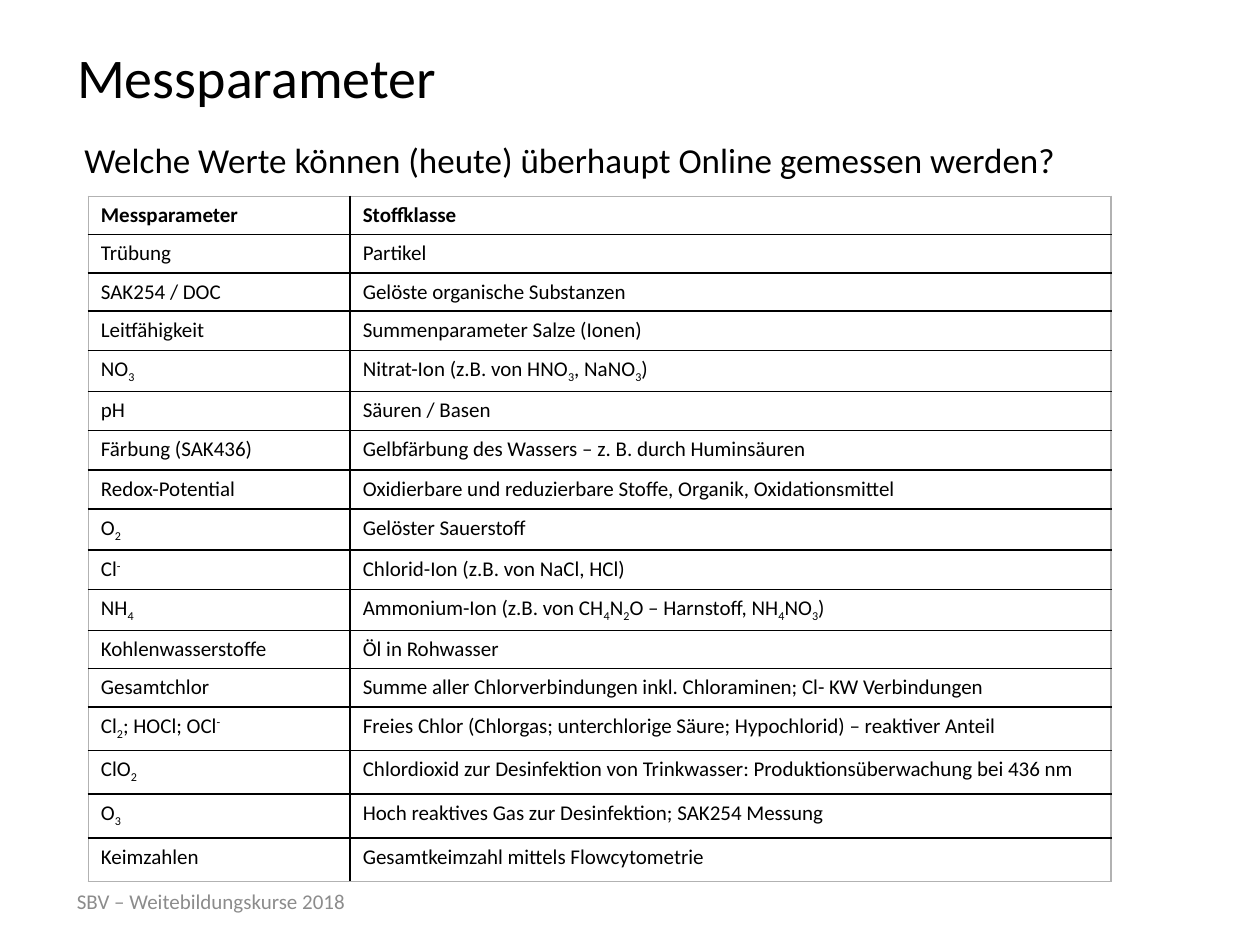
"""Build the slide listing water parameters that can be measured online."""
from lxml import etree
from pptx import Presentation
from pptx import util as u
from pptx.dml.color import RGBColor
from pptx.enum import text
from pptx.oxml.ns import qn

FONT = "Calibri"
BLACK, GREY, WHITE, RIM = "000000", "8C8C8C", "FFFFFF", "B2B2B2"
SHIFTS = {"_": "-25000", "^": "30000"}

TITLE = ("Messparameter", 32, BLACK, (1.3, 0.53, 18.39, 2.01))
BOXES = [
    ("SBV – Weitebildungskurse 2018", 12, GREY, (1.3, 17.65, 9.02, 1.02)),
    ("Welche Werte können (heute) überhaupt Online gemessen werden?",
     20, BLACK, (1.45, 2.51, 22.86, 1.4)),
]
ROWS = [
    ("Messparameter", "Stoffklasse"),
    ("Trübung", "Partikel"),
    ("SAK254 / DOC", "Gelöste organische Substanzen"),
    ("Leitfähigkeit", "Summenparameter Salze (Ionen)"),
    ("NO|_3", "Nitrat-Ion (z.B. von HNO|_3|, NaNO|_3|)"),
    ("pH", "Säuren / Basen"),
    ("Färbung (SAK436)", "Gelbfärbung des Wassers – z. B. durch Huminsäuren"),
    ("Redox-Potential",
     "Oxidierbare und reduzierbare Stoffe, Organik, Oxidationsmittel"),
    ("O|_2", "Gelöster Sauerstoff"),
    ("Cl|^-", "Chlorid-Ion (z.B. von NaCl, HCl)"),
    ("NH|_4",
     "Ammonium-Ion (z.B. von CH|_4|N|_2|O – Harnstoff, NH|_4|NO|_3|)"),
    ("Kohlenwasserstoffe", "Öl in Rohwasser"),
    ("Gesamtchlor",
     "Summe aller Chlorverbindungen inkl. Chloraminen; Cl- KW Verbindungen"),
    ("Cl|_2|; HOCl; OCl|^-",
     "Freies Chlor (Chlorgas; unterchlorige Säure; Hypochlorid) – reaktiver Anteil"),
    ("ClO|_2",
     "Chlordioxid zur Desinfektion von Trinkwasser: Produktionsüberwachung bei 436 nm"),
    ("O|_3", "Hoch reaktives Gas zur Desinfektion; SAK254 Messung"),
    ("Keimzahlen", "Gesamtkeimzahl mittels Flowcytometrie"),
]
COLS = [5.28, 15.34]
HEIGHTS = [0.77] * 3 + [0.79] * 8 + [0.77] * 2 + [0.88] * 4
TABLE_LEFT, TABLE_TOP = 1.78, 3.96


def rgb(value):
    return RGBColor.from_string(value)


def style(r, size, color, bold=False):
    r.font.name, r.font.size, r.font.bold = FONT, u.Pt(size), bold
    r.font.color.rgb = rgb(color)


def fill_box(sp, content, size, color, place):
    sp.left, sp.top, sp.width, sp.height = map(u.Cm, place)
    tf = sp.text_frame
    tf.text = content
    tf.word_wrap = True
    tf.auto_size = text.MSO_AUTO_SIZE.NONE
    tf.vertical_anchor = text.MSO_ANCHOR.MIDDLE
    p = tf.paragraphs[0]
    p.alignment = text.PP_ALIGN.LEFT
    style(p.runs[0], size, color)


def fill_cell(cell, content, bold):
    cell.fill.solid()
    cell.fill.fore_color.rgb = rgb(WHITE)
    p = cell.text_frame.paragraphs[0]
    for part in content.split("|"):
        shift = SHIFTS.get(part[0])
        r = p.add_run()
        r.text = part[1:] if shift else part
        style(r, 12, BLACK, bold)
        if shift:
            r.font._element.set("baseline", shift)


def border(cell, sides):
    tc_pr = cell._tc.get_or_add_tcPr()
    for i, (side, color) in enumerate(sides.items()):
        ln = etree.Element(qn(f"a:ln{side}"), w=str(u.Pt(1)))
        solid = etree.SubElement(ln, qn("a:solidFill"))
        etree.SubElement(solid, qn("a:srgbClr"), val=color)
        tc_pr.insert(i, ln)


def add_grid(s):
    frame = s.shapes.add_table(
        len(ROWS), len(COLS), u.Cm(TABLE_LEFT), u.Cm(TABLE_TOP),
        u.Cm(sum(COLS)), u.Cm(sum(HEIGHTS)))
    table = frame.table
    table.first_row = table.horz_banding = False
    for col, width in zip(table.columns, COLS):
        col.width = u.Cm(width)
    for i, (row, height) in enumerate(zip(table.rows, HEIGHTS)):
        row.height = u.Cm(height)
        for j, content in enumerate(ROWS[i]):
            cell = table.cell(i, j)
            fill_cell(cell, content, bold=i == 0)
            outer = {"L": j == 0, "R": j == len(COLS) - 1,
                     "T": i == 0, "B": i == len(ROWS) - 1}
            border(cell, {k: RIM if v else BLACK for k, v in outer.items()})


def main():
    prs = Presentation()
    prs.slide_width, prs.slide_height = u.Cm(25.4), u.Cm(19.05)
    s = prs.slides.add_slide(prs.slide_layouts[5])
    fill_box(s.shapes.title, *TITLE)
    for content, size, color, place in BOXES:
        sp = s.shapes.add_textbox(*map(u.Cm, place))
        fill_box(sp, content, size, color, place)
    add_grid(s)
    prs.save("out.pptx")


if __name__ == "__main__":
    main()
